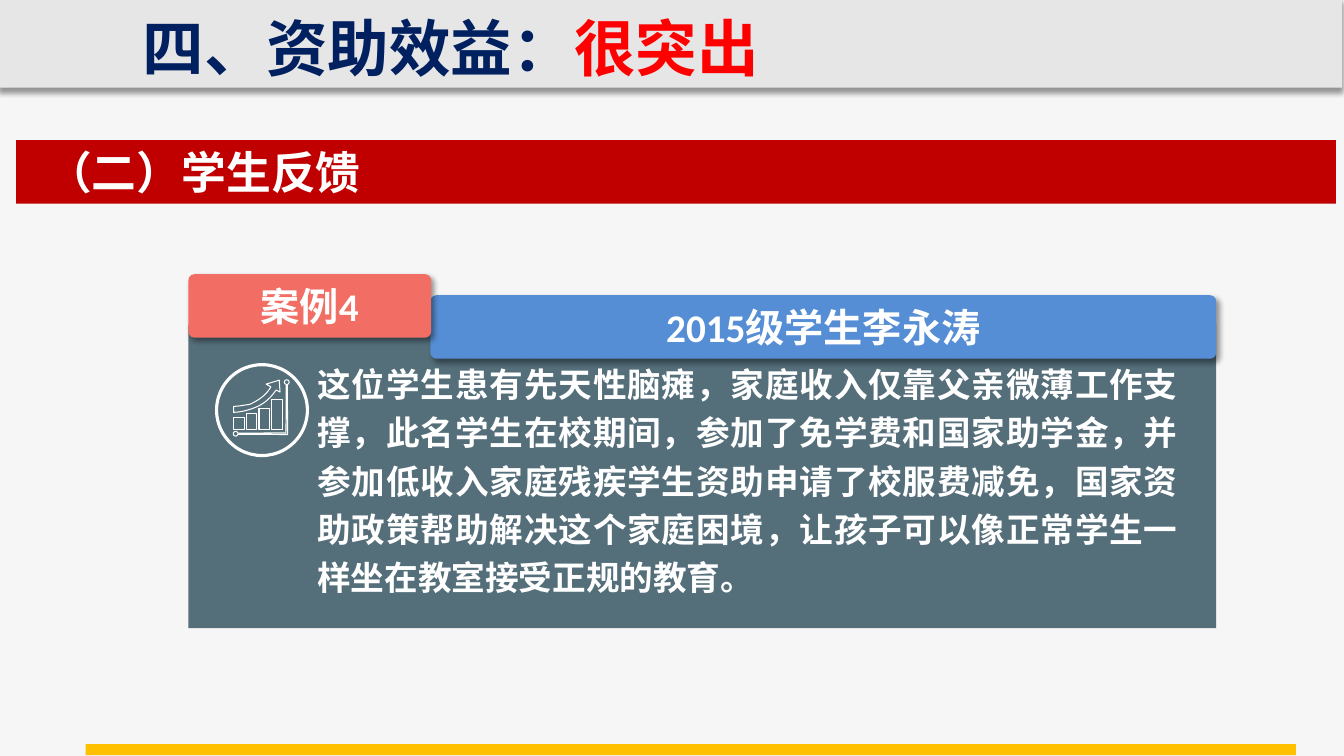
import math

from lxml import etree
from pptx import Presentation
from pptx.dml.color import RGBColor
from pptx.enum.shapes import MSO_SHAPE
from pptx.enum.text import MSO_ANCHOR, PP_ALIGN
from pptx.oxml import parse_xml
from pptx.oxml.ns import nsdecls, qn
from pptx.util import Cm, Pt

RECT, ROUNDED, OVAL = MSO_SHAPE.RECTANGLE, MSO_SHAPE.ROUNDED_RECTANGLE, MSO_SHAPE.OVAL
TOP, MIDDLE = MSO_ANCHOR.TOP, MSO_ANCHOR.MIDDLE
LEFT, CENTER, JUSTIFY = PP_ALIGN.LEFT, PP_ALIGN.CENTER, PP_ALIGN.JUSTIFY

PAPER = RGBColor(0xF6, 0xF6, 0xF6)
HEADER_GREY = RGBColor(0xE6, 0xE6, 0xE6)
NAVY = RGBColor(0x00, 0x20, 0x60)
RED = RGBColor(0xFF, 0x00, 0x00)
DARK_RED = RGBColor(0xC0, 0x00, 0x00)
AMBER = RGBColor(0xFF, 0xC0, 0x00)
SLATE = RGBColor(0x54, 0x6E, 0x7A)
BLUE = RGBColor(0x55, 0x8E, 0xD5)
CORAL = RGBColor(0xF2, 0x6D, 0x64)
WHITE = RGBColor(0xFF, 0xFF, 0xFF)

CJK_FONT = "Noto Sans CJK SC"
LATIN_FONT = "Calibri"

STORY = (
    "这位学生患有先天性脑瘫，家庭收入仅靠父亲微薄工作支撑，此名学生在校期间，"
    "参加了免学费和国家助学金，并参加低收入家庭残疾学生资助申请了校服费减免，"
    "国家资助政策帮助解决这个家庭困境，让孩子可以像正常学生一样坐在教室接受正规的教育。"
)


def place(shape, left, top, width, height):
    shape.left, shape.top = Cm(left), Cm(top)
    shape.width, shape.height = Cm(width), Cm(height)


def add_bold_run(paragraph, text, size, color, latin=CJK_FONT):
    run = paragraph.add_run()
    run.text = text
    font = run.font
    font.size, font.bold, font.name = Pt(size), True, latin
    font.color.rgb = color
    east_asian = etree.SubElement(run._r.get_or_add_rPr(), qn("a:ea"))
    east_asian.set("typeface", CJK_FONT)


def add_block(shapes, kind, box, color):
    block = shapes.add_shape(kind, *map(Cm, box))
    block.shadow.inherit = False
    block.fill.solid()
    block.fill.fore_color.rgb = color
    block.line.fill.background()
    return block


def cast_shadow(shape, degrees):
    effects = shape._element.spPr.find(qn("a:effectLst"))
    effects.append(parse_xml(
        f'<a:outerShdw {nsdecls("a")} blurRad="{Pt(4)}" dist="{Pt(3)}" '
        f'dir="{degrees * 60000}" algn="tl" rotWithShape="0">'
        '<a:srgbClr val="000000"><a:alpha val="40000"/></a:srgbClr></a:outerShdw>'
    ))


def add_tab(shapes, box, label, color):
    tab = add_block(shapes, ROUNDED, box, color)
    tab.adjustments[0] = 0.096
    cast_shadow(tab, 45)
    tab.text_frame.vertical_anchor = MIDDLE
    paragraph = tab.text_frame.paragraphs[0]
    paragraph.alignment = CENTER
    add_bold_run(paragraph, label, 28, WHITE, LATIN_FONT)


def add_text(shapes, box, text, size):
    frame = shapes.add_textbox(*map(Cm, box)).text_frame
    frame.word_wrap = True
    paragraph = frame.paragraphs[0]
    add_bold_run(paragraph, text, size, WHITE)
    return paragraph


def outline(shape, weight):
    shape.shadow.inherit = False
    shape.fill.background()
    shape.line.color.rgb = WHITE
    shape.line.width = Pt(weight)


def add_outlined_path(shapes, points):
    start, *others = [(Cm(x), Cm(y)) for x, y in points]
    builder = shapes.build_freeform(*start)
    builder.add_line_segments(others, close=True)
    outline(builder.convert_to_shape(), 0.75)


def bezier(*controls, steps=8):
    """Points along a cubic curve given by four control points."""
    points = []
    for step in range(steps + 1):
        t = step / steps
        weights = ((1 - t) ** 3, 3 * t * (1 - t) ** 2, 3 * t * t * (1 - t), t ** 3)
        points.append(tuple(sum(w * c[axis] for w, c in zip(weights, controls))
                            for axis in (0, 1)))
    return points


def knob(x, y, first_angle, radius=0.06):
    """Nearly full circle, open where it meets its axis."""
    angles = (math.radians(first_angle + step * 33) for step in range(11))
    return [(x + radius * math.cos(a), y + radius * math.sin(a)) for a in angles]


def add_growth_icon(shapes):
    icon = shapes.add_group_shape().shapes
    outline(icon.add_shape(OVAL, Cm(5.46), Cm(9.19), Cm(2.29), Cm(2.29)), 2.25)

    upper_edge = (bezier((6.83, 9.75), (6.71, 9.96), (6.53, 10.08), (6.3, 10.19))
                  + bezier((6.3, 10.19), (6.15, 10.21), (6.02, 10.24), (5.89, 10.24)))
    lower_edge = (bezier((5.89, 10.39), (6.02, 10.39), (6.17, 10.36), (6.32, 10.31))
                  + bezier((6.32, 10.31), (6.6, 10.22), (6.77, 10.1), (6.96, 9.83)))
    add_outlined_path(icon, [(7.04, 9.58), (6.71, 9.68), *upper_edge,
                             *lower_edge, (7.06, 9.88)])

    bar_bottom = 10.82
    for index, height in enumerate((0.3, 0.41, 0.53, 0.75)):
        bar = icon.add_shape(RECT, Cm(5.89 + index * 0.32), Cm(bar_bottom - height),
                             Cm(0.27), Cm(height))
        outline(bar, 0.75)

    add_outlined_path(icon, [*knob(7.23, 9.63, 105), (7.25, 10.95),
                             *knob(5.94, 10.93, 15), (7.21, 10.91)])


def add_title(slide):
    title = slide.shapes.title
    place(title, 3.35, 0.13, 30.35, 2.13)
    slide.shapes._spTree.append(title._element)  # in front of the header band
    title.text_frame.vertical_anchor = TOP
    paragraph = title.text_frame.paragraphs[0]
    paragraph.alignment = LEFT
    add_bold_run(paragraph, "四、资助效益：", 44, NAVY)
    add_bold_run(paragraph, "很突出", 44, RED)


def main():
    deck = Presentation()
    deck.slide_width, deck.slide_height = Cm(33.88), Cm(19.05)
    slide = deck.slides.add_slide(deck.slide_layouts[5])
    slide.background.fill.solid()
    slide.background.fill.fore_color.rgb = PAPER
    shapes = slide.shapes

    header = add_block(shapes, RECT, (-0.05, -0.08, 33.88, 2.29), HEADER_GREY)
    cast_shadow(header, 90)
    add_title(slide)

    add_block(shapes, RECT, (0.41, 3.53, 33.27, 1.6), DARK_RED)
    add_text(shapes, (0.94, 3.51, 28.8, 1.63), "（二）学生反馈", 32)
    add_block(shapes, RECT, (2.16, 18.75, 30.51, 0.28), AMBER)

    add_block(shapes, RECT, (4.75, 8.18, 25.91, 7.65), SLATE)
    add_tab(shapes, (10.85, 7.44, 19.81, 1.6), "2015级学生李永涛", BLUE)
    add_tab(shapes, (4.75, 6.91, 6.12, 1.6), "案例4", CORAL)
    story = add_text(shapes, (7.75, 8.84, 22.2, 6.4), STORY, 24)
    story.alignment = JUSTIFY
    story.line_spacing = 1.2
    add_growth_icon(shapes)

    deck.save("out.pptx")


if __name__ == "__main__":
    main()
